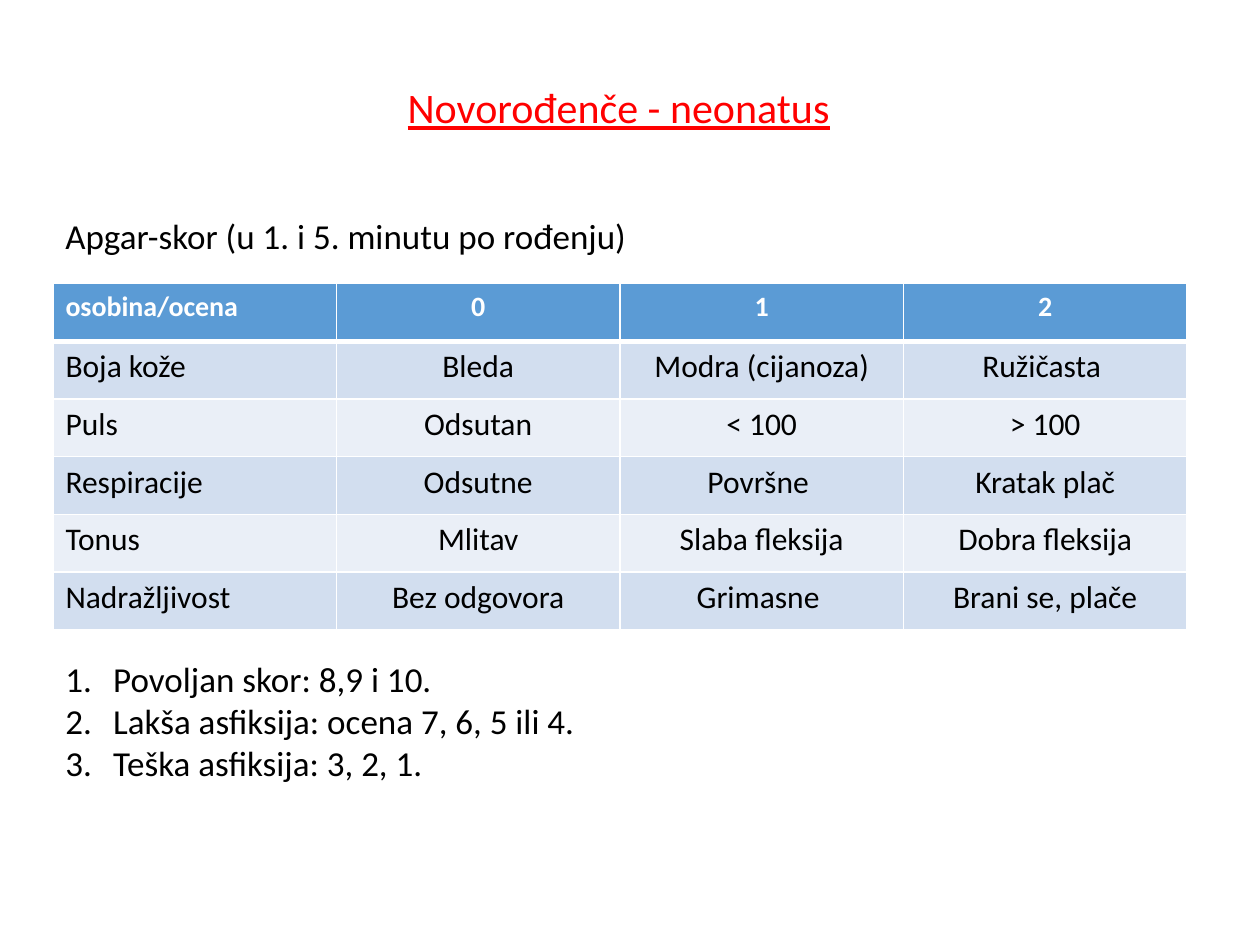
import pptx
import pptx.util
from pptx.dml.color import RGBColor
from pptx.enum.text import MSO_ANCHOR, PP_ALIGN
from pptx.oxml.ns import qn
from lxml import etree

WIDTH, HEIGHT = 10, 7.5
LEFT = 0.42
FONT = "Calibri"
COLORS = {
    "title": "FF0000",
    "text": "000000",
    "white": "FFFFFF",
    "header": "5B9BD5",
    "odd": "D2DEEF",
    "even": "EAEFF7",
}
SCORES = [
    ["osobina/ocena", "0", "1", "2"],
    ["Boja kože", "Bleda", "Modra (cijanoza)", "Ružičasta "],
    ["Puls", "Odsutan", "< 100", "> 100"],
    ["Respiracije", "Odsutne", "Površne ", "Kratak plač"],
    ["Tonus", "Mlitav", "Slaba fleksija", "Dobra fleksija"],
    ["Nadražljivost", "Bez odgovora", "Grimasne ", "Brani se, plače"],
]
OUTCOMES = [
    "Povoljan skor: 8,9 i 10.",
    "Lakša asfiksija: ocena 7, 6, 5 ili 4.",
    "Teška asfiksija: 3, 2, 1.",
]


def inches(*lengths):
    return [pptx.util.Inches(length) for length in lengths]


def style(para, size, color, bold=False):
    para.font.name = FONT
    para.font.size = pptx.util.Pt(size)
    para.font.bold = bold
    para.font.color.rgb = RGBColor.from_string(COLORS[color])


def set_title(page, text):
    title = page.shapes.title
    title.left, title.top, title.width, title.height = inches(0.6, 0.15, 8.62, 1.45)
    title.text_frame.text = text
    title.text_frame.vertical_anchor = MSO_ANCHOR.MIDDLE
    para = title.text_frame.paragraphs[0]
    para.alignment = PP_ALIGN.CENTER
    para.line_spacing = 0.9
    style(para, 24, "title")
    para.font.underline = True


def number(para):
    properties = para._p.get_or_add_pPr()
    indent = pptx.util.Inches(0.38)
    properties.set("marL", str(indent))
    properties.set("indent", str(-indent))
    bullet = etree.SubElement(properties, qn("a:buAutoNum"))
    bullet.set("type", "arabicPeriod")


def add_text(page, place, lines, numbered=False):
    box = page.shapes.add_textbox(*inches(*place))
    frame = box.text_frame
    frame.word_wrap = True
    frame.text = "\n".join(lines)
    for para in frame.paragraphs:
        if numbered:
            number(para)
        style(para, 20, "text")


def set_borders(cell, widths):
    properties = cell._tc.get_or_add_tcPr()
    for position, (side, width) in enumerate(widths.items()):
        line = etree.Element(qn(f"a:ln{side}"), w=str(pptx.util.Pt(width)))
        fill = etree.SubElement(line, qn("a:solidFill"))
        etree.SubElement(fill, qn("a:srgbClr"), val=COLORS["white"])
        properties.insert(position, line)


def add_scores(page, place, rows):
    columns = len(rows[0])
    table = page.shapes.add_table(len(rows), columns, *inches(*place)).table
    for r, row in enumerate(rows):
        header = r == 0
        fill = "header" if header else "odd" if r % 2 else "even"
        for c, text in enumerate(row):
            cell = table.cell(r, c)
            cell.text = text
            cell.fill.solid()
            cell.fill.fore_color.rgb = RGBColor.from_string(COLORS[fill])
            para = cell.text_frame.paragraphs[0]
            para.alignment = PP_ALIGN.CENTER if c else PP_ALIGN.LEFT
            style(para, 16 if header else 18, "white" if header else "text", header)
            # A thick rule parts the header from the body
            set_borders(cell, {"L": 1, "R": 1, "T": 3 if r == 1 else 1,
                               "B": 3 if header else 1})


def main():
    deck = pptx.Presentation()
    deck.slide_width, deck.slide_height = inches(WIDTH, HEIGHT)
    page = deck.slides.add_slide(deck.slide_layouts[5])

    # Heading and caption
    set_title(page, "Novorođenče - neonatus")
    add_text(page, (LEFT, 1.65, 4.7, 0.44),
             ["Apgar-skor (u 1. i 5. minutu po rođenju)"])

    # Score table and its reading
    add_scores(page, (LEFT, 2.25, 9, 2.75), SCORES)
    add_text(page, (LEFT, 5.17, 4.28, 1.41), OUTCOMES, numbered=True)

    deck.save("out.pptx")


if __name__ == "__main__":
    main()
